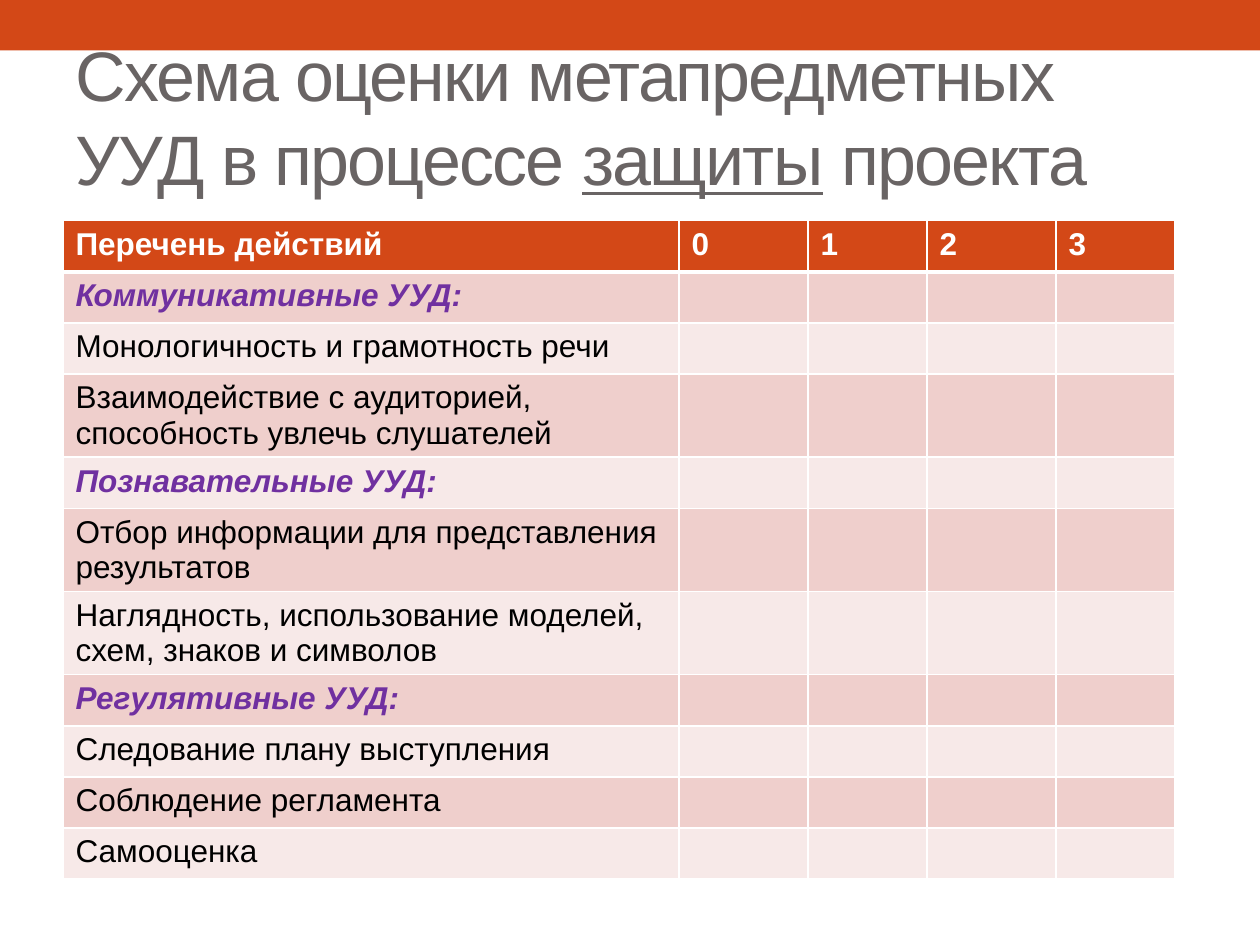
from lxml import etree
from pptx import Presentation
from pptx.dml.color import RGBColor
from pptx.enum import shapes, text
from pptx.oxml import ns
from pptx.util import Cm, Pt


def rgb(code):
    """Turn a hex string into a colour."""
    return RGBColor.from_string(code)


class Page:
    """Holds the style and the current slide."""

    face = "Arial"
    accent = "D34817"
    bands = ("EFCFCC", "F7E9E8")

    def __init__(self, deck):
        self.slide = deck.slides.add_slide(deck.slide_layouts[5])

    def font(self, para, size, color, bold=False, italic=False):
        """Format a whole paragraph."""
        font = para.font
        font.name, font.size = self.face, Pt(size)
        font.bold, font.italic = bold, italic
        font.color.rgb = rgb(color)

    def bar(self, x, y, w, h):
        """Draw a plain accent band."""
        bar = self.slide.shapes.add_shape(
            shapes.MSO_SHAPE.RECTANGLE, Cm(x), Cm(y), Cm(w), Cm(h))
        bar.shadow.inherit = False
        bar.fill.solid()
        bar.fill.fore_color.rgb = rgb(self.accent)
        bar.line.fill.background()

    def title(self, parts, x, y, w, h):
        """Place the title from (text, underline) parts."""
        title = self.slide.shapes.title
        title.left, title.top, title.width, title.height = map(Cm, (x, y, w, h))
        frame = title.text_frame
        frame.word_wrap = True
        frame.auto_size = text.MSO_AUTO_SIZE.NONE
        frame.vertical_anchor = text.MSO_ANCHOR.MIDDLE
        para = frame.paragraphs[0]
        para.alignment = text.PP_ALIGN.LEFT
        self.font(para, 40, "696464")
        for words, under in parts:
            run = para.add_run()
            run.text = words
            run.font.underline = under
            run.font._element.set("spc", "-100")

    def edges(self, cell, low):
        """Draw white borders, the bottom one low points wide."""
        props = cell._tc.get_or_add_tcPr()
        for spot, (side, width) in enumerate(
                (("L", 1), ("R", 1), ("T", 1), ("B", low))):
            line = etree.Element(ns.qn(f"a:ln{side}"), w=str(Pt(width)))
            fill = etree.SubElement(line, ns.qn("a:solidFill"))
            etree.SubElement(fill, ns.qn("a:srgbClr"), val="FFFFFF")
            props.insert(spot, line)

    def table(self, head, rows, cols, x, y, high):
        """Build the table from a header and (text, is group) rows."""
        count = len(rows) + 1
        grid = self.slide.shapes.add_table(
            count, len(cols), Cm(x), Cm(y), Cm(sum(cols)), Cm(high * count)).table
        for col, width in zip(grid.columns, cols):
            col.width = Cm(width)
        for c, label in enumerate(head):
            self.cell(grid.cell(0, c), label, self.accent, "FFFFFF", True, low=3)
        for r, (label, group) in enumerate(rows, 1):
            color = "7030A0" if group else "000000"
            for c in range(len(cols)):
                self.cell(grid.cell(r, c), "" if c else label,
                          self.bands[(r - 1) % 2], color, group, group)

    def cell(self, cell, label, fill, color, bold, italic=False, low=1):
        """Fill and format one cell."""
        cell.text = label
        self.font(cell.text_frame.paragraphs[0], 18, color, bold, italic)
        cell.fill.solid()
        cell.fill.fore_color.rgb = rgb(fill)
        self.edges(cell, low)


def main():
    """Build the slide."""
    deck = Presentation()
    deck.slide_width, deck.slide_height = Cm(25.4), Cm(19.05)
    page = Page(deck)
    page.bar(0, 0, 25.4, 1.02)
    page.title([("Схема оценки метапредметных УУД в процессе ", False),
                ("защиты", True), (" проекта", False)], 1.27, 0.43, 22.43, 3.81)
    rows = [
        ("Коммуникативные УУД:", True),
        ("Монологичность и грамотность речи", False),
        ("Взаимодействие с аудиторией, способность увлечь слушателей", False),
        ("Познавательные УУД:", True),
        ("Отбор информации для представления результатов", False),
        ("Наглядность, использование моделей, схем, знаков и символов", False),
        ("Регулятивные УУД:", True),
        ("Следование плану выступления", False),
        ("Соблюдение регламента", False),
        ("Самооценка", False),
    ]
    page.table(["Перечень действий", "0", "1", "2", "3"], rows,
               [12.42, 2.6, 2.4, 2.6, 2.4], 1.27, 4.45, 1.03)
    deck.save("out.pptx")


if __name__ == "__main__":
    main()
